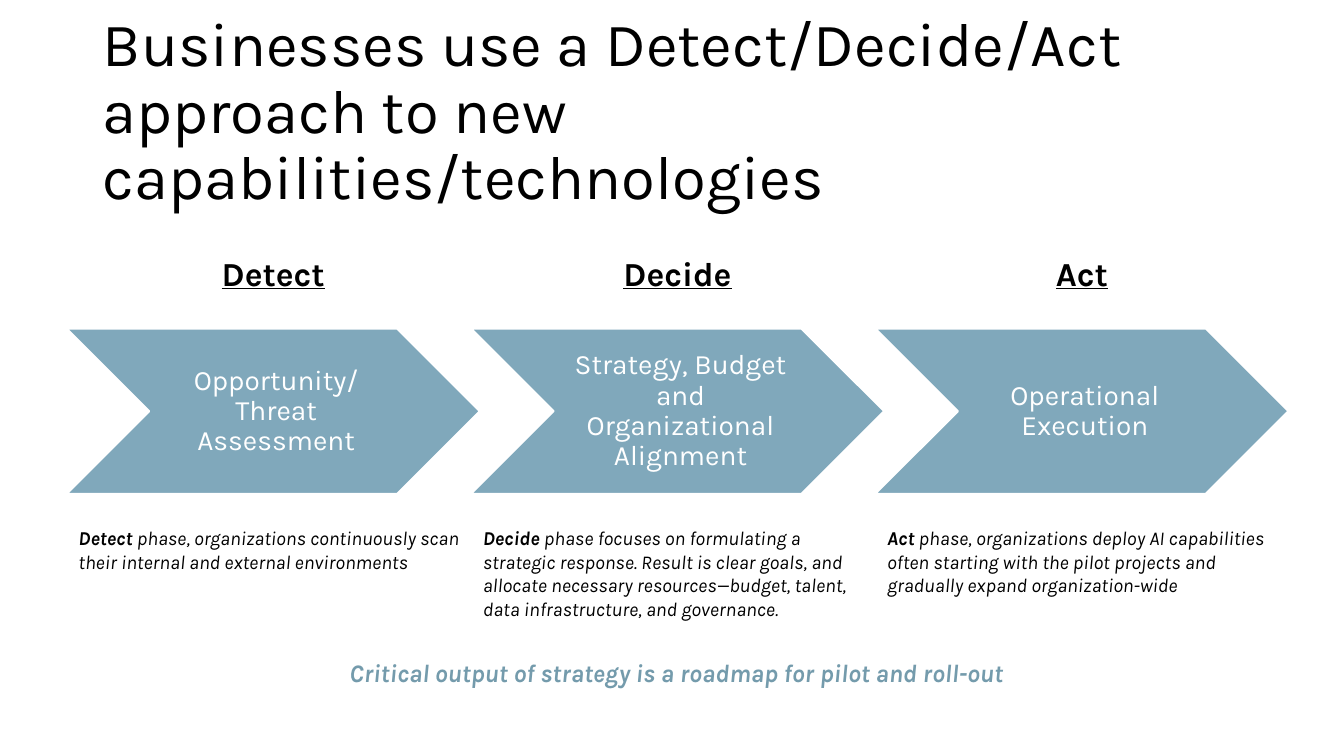
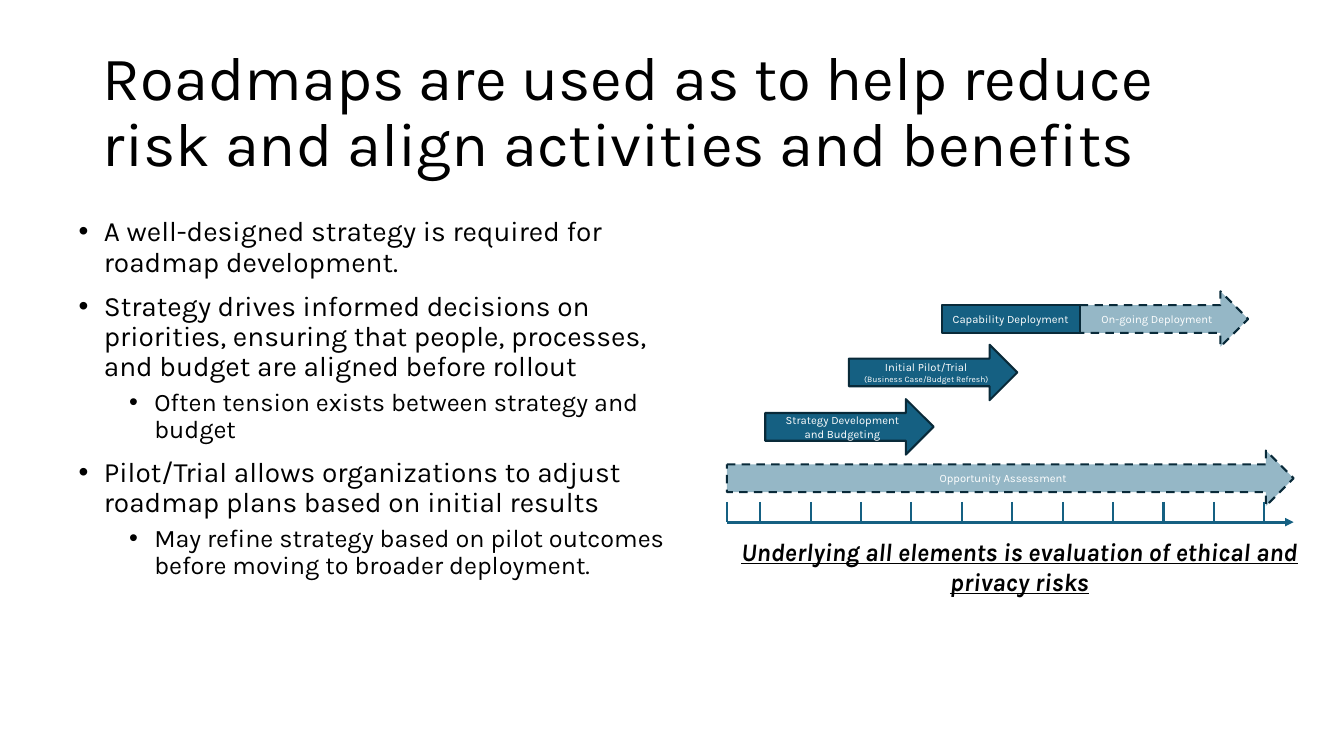
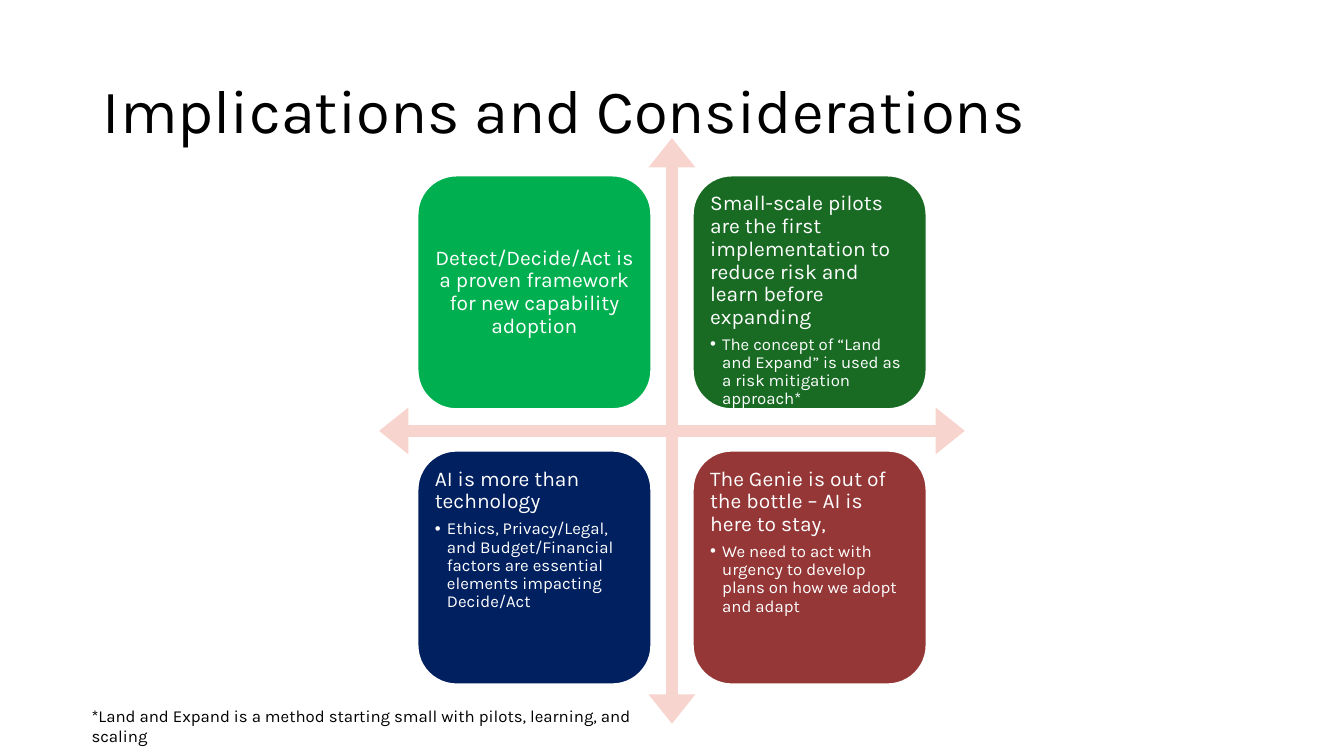
from dataclasses import dataclass

from lxml import etree
from pptx import Presentation
from pptx.dml.color import RGBColor
from pptx.enum.dml import MSO_LINE
from pptx.enum.shapes import MSO_CONNECTOR, MSO_SHAPE
from pptx.enum.text import MSO_ANCHOR, MSO_AUTO_SIZE, PP_ALIGN
from pptx.oxml.ns import qn
from pptx.util import Inches, Pt


@dataclass(frozen=True)
class Theme:
    font: str = "Karla"
    # Colours
    black: str = "000000"
    white: str = "FFFFFF"
    blue: str = "156082"
    outline: str = "092A39"
    message: str = "749BAC"
    cross: str = "F7D5CE"
    light_green: str = "00B050"
    dark_green: str = "196B24"
    navy: str = "002060"
    red: str = "953737"
    # Type sizes
    title: int = 44
    heading: int = 24
    body: int = 20
    sub_body: int = 18
    card: int = 15
    caption: int = 14
    note: int = 12
    bar: int = 8
    bar_note: int = 6
    # Line width and line spacing
    line: float = 1.5
    spacing: float = 0.9


T = Theme()
TITLE_ONLY, TITLE_AND_BODY = 5, 1


# Text helpers

def style(p, size, color=T.black, **marks):
    """Format every run of a paragraph; marks are bold, italic, underline."""
    for r in p.runs:
        r.font.name = T.font
        r.font.size = Pt(size)
        r.font.color.rgb = RGBColor.from_string(color)
        for mark, value in marks.items():
            setattr(r.font, mark, value)


def add_bullet(p, left, hang):
    pPr = p._p.get_or_add_pPr()
    pPr.set("marL", str(Inches(left)))
    pPr.set("indent", str(-Inches(hang)))
    etree.SubElement(pPr, qn("a:buFont")).set("typeface", "Arial")
    etree.SubElement(pPr, qn("a:buChar")).set("char", "•")


def next_paragraph(tf, index):
    return tf.paragraphs[0] if index == 0 else tf.add_paragraph()


def set_insets(tf, left, top, right, bottom):
    tf.margin_left, tf.margin_top = Inches(left), Inches(top)
    tf.margin_right, tf.margin_bottom = Inches(right), Inches(bottom)


def add_text(s, x, y, w, h, text, size, color=T.black, align=PP_ALIGN.LEFT, **marks):
    tf = s.shapes.add_textbox(Inches(x), Inches(y), Inches(w), Inches(h)).text_frame
    tf.word_wrap = True
    p = tf.paragraphs[0]
    p.text = text
    p.alignment = align
    style(p, size, color, **marks)
    return p


# Slide and shape helpers

def place(sp, x, y, w, h):
    sp.left, sp.top, sp.width, sp.height = Inches(x), Inches(y), Inches(w), Inches(h)


def add_slide(prs, layout, title):
    s = prs.slides.add_slide(prs.slide_layouts[layout])
    place(s.shapes.title, 0.92, 0.4, 11.5, 1.45)
    tf = s.shapes.title.text_frame
    tf.text = title
    tf.auto_size = MSO_AUTO_SIZE.NONE
    tf.vertical_anchor = MSO_ANCHOR.MIDDLE
    p = tf.paragraphs[0]
    p.alignment = PP_ALIGN.LEFT
    p.line_spacing = T.spacing
    style(p, T.title)
    return s


def add_shape(s, kind, x, y, w, h, fill, line=None, opacity=None, dashed=False):
    sp = s.shapes.add_shape(kind, Inches(x), Inches(y), Inches(w), Inches(h))
    sp.shadow.inherit = False
    sp.fill.solid()
    sp.fill.fore_color.rgb = RGBColor.from_string(fill)
    if opacity:
        color = sp.fill._xPr.find(".//" + qn("a:srgbClr"))
        etree.SubElement(color, qn("a:alpha")).set("val", str(opacity * 1000))
    if line:
        sp.line.color.rgb = RGBColor.from_string(line)
        sp.line.width = Pt(T.line)
        if dashed:
            sp.line.dash_style = MSO_LINE.DASH
    else:
        sp.line.fill.background()
    return sp


def add_line(s, x1, y1, x2, y2, width=T.line, arrow=False):
    cn = s.shapes.add_connector(
        MSO_CONNECTOR.STRAIGHT, Inches(x1), Inches(y1), Inches(x2), Inches(y2))
    cn.line.color.rgb = RGBColor.from_string(T.blue)
    cn.line.width = Pt(width)
    if arrow:
        etree.SubElement(cn.line._get_or_add_ln(), qn("a:tailEnd")).set("type", "triangle")
    etree.SubElement(cn._element.spPr, qn("a:effectLst"))


def add_phase(s, x, heading, step, caption):
    """One column: heading, chevron and a caption that opens with the heading."""
    w = 4.1
    add_text(s, x, 2.46, w, 0.5, heading, T.heading, align=PP_ALIGN.CENTER,
             bold=True, underline=True)

    sp = add_shape(s, MSO_SHAPE.CHEVRON, x, 3.26, w, 1.64, T.blue, T.white, opacity=54)
    tf = sp.text_frame
    set_insets(tf, 0.09, 0.03, 0.03, 0.03)
    p = tf.paragraphs[0]
    p.text = step
    p.alignment = PP_ALIGN.CENTER
    p.line_spacing = T.spacing
    style(p, T.body, T.white)

    p = add_text(s, x + 0.02, 5.17, 4.07, 1.04, heading, T.caption)
    p.add_run().text = caption
    style(p, T.caption, italic=True)
    p.runs[0].font.bold = True


def add_bar(s, kind, x, y, w, h, lines, ongoing=False):
    """A roadmap bar; ongoing work is pale and dashed."""
    sp = add_shape(s, kind, x, y, w, h, T.blue, T.outline,
                   opacity=45 if ongoing else None, dashed=ongoing)
    for i, text in enumerate(lines):
        p = next_paragraph(sp.text_frame, i)
        p.text = text
        p.alignment = PP_ALIGN.CENTER
        style(p, T.bar_note if i else T.bar, T.white)


def add_card(s, x, y, fill, text, point=None):
    """A rounded card: a lone statement is centred, one with a point is not."""
    sp = add_shape(s, MSO_SHAPE.ROUNDED_RECTANGLE, x, y, 2.32, 2.32, fill, T.white)
    tf = sp.text_frame
    set_insets(tf, 0.06, 0.06, 0.06, 0.06)
    tf.vertical_anchor = MSO_ANCHOR.TOP if point else MSO_ANCHOR.MIDDLE
    p = tf.paragraphs[0]
    p.text = text
    p.alignment = PP_ALIGN.LEFT if point else PP_ALIGN.CENTER
    p.line_spacing = T.spacing
    style(p, T.card, T.white)
    if point:
        p.space_after = Pt(5)
        p = tf.add_paragraph()
        p.text = point
        p.alignment = PP_ALIGN.LEFT
        add_bullet(p, 0.12, 0.12)
        p.line_spacing = T.spacing
        style(p, T.note, T.white)


def fill_body(s, items):
    """Fill the body placeholder with (level, text) bullets."""
    body = s.placeholders[1]
    place(body, 0.68, 2.11, 6.23, 4.65)
    tf = body.text_frame
    tf.auto_size = MSO_AUTO_SIZE.NONE
    for i, (level, text) in enumerate(items):
        p = next_paragraph(tf, i)
        p.text = text
        p.level = level
        add_bullet(p, 0.25 + 0.5 * level, 0.25)
        p.line_spacing = T.spacing
        p.space_before = Pt(0 if i == 0 else 5 if level else 10)
        style(p, T.sub_body if level else T.body)


# Slides

def build_approach(prs):
    s = add_slide(prs, TITLE_ONLY, "Businesses use a Detect/Decide/Act "
                  "approach to new capabilities/technologies")
    phases = [
        ("Detect", "Opportunity/Threat Assessment",
         " phase, organizations continuously scan their internal and external environments"),
        ("Decide", "Strategy, Budget and Organizational Alignment",
         " phase focuses on formulating a strategic response. Result is clear goals, and "
         "allocate necessary resources—budget, talent, data infrastructure, and governance."),
        ("Act", "Operational Execution",
         " phase, organizations deploy AI capabilities often starting with the pilot "
         "projects and gradually expand organization-wide"),
    ]
    for i, phase in enumerate(phases):
        add_phase(s, 0.66 + 4.01 * i, *phase)
    add_text(s, 3.21, 6.47, 7, 0.4,
             "Critical output of strategy is a roadmap for pilot and roll-out",
             T.sub_body, T.message, PP_ALIGN.CENTER, bold=True, italic=True)


def build_roadmap(prs):
    s = add_slide(prs, TITLE_AND_BODY, "Roadmaps are used as to help reduce risk "
                  "and align activities and benefits")
    fill_body(s, [
        (0, "A well-designed strategy is required for roadmap development."),
        (0, "Strategy drives informed decisions on priorities, ensuring that people, "
            "processes, and budget are aligned before rollout"),
        (1, "Often tension exists between strategy and budget"),
        (0, "Pilot/Trial allows organizations to adjust roadmap plans based on "
            "initial results"),
        (1, "May refine strategy based on pilot outcomes before moving to broader "
            "deployment."),
    ])

    # Roadmap bars, from the bottom row up
    arrow = MSO_SHAPE.RIGHT_ARROW
    left, length, head = 7.21, 5.62, 0.55
    add_bar(s, arrow, left, 4.47, length, head, ["Opportunity Assessment"], ongoing=True)
    add_bar(s, arrow, 7.59, 3.96, 1.67, head, ["Strategy Development and Budgeting"])
    add_bar(s, arrow, 8.42, 3.42, 1.67, head,
            ["Initial Pilot/Trial", "(Business Case/Budget Refresh)"])
    add_bar(s, arrow, 10.71, 2.89, 1.67, head, ["On-going Deployment"], ongoing=True)
    add_bar(s, MSO_SHAPE.RECTANGLE, 9.34, 3.03, 1.37, 0.27, ["Capability Deployment"])

    # Time axis with its ticks
    axis = 5.18
    add_line(s, left, axis, left + length, axis, width=2, arrow=True)
    for x in [left] + [7.54 + 0.5 * i for i in range(11)]:
        add_line(s, x, axis - 0.2, x, axis)

    add_text(s, left, 5.27, 5.8, 0.71,
             "Underlying all elements is evaluation of ethical and privacy risks",
             T.sub_body, align=PP_ALIGN.CENTER, bold=True, italic=True, underline=True)


def build_implications(prs):
    s = add_slide(prs, TITLE_ONLY, "Implications and Considerations")
    cross = add_shape(s, MSO_SHAPE.QUAD_ARROW, 3.76, 1.37, 5.81, 5.81, T.cross)
    for i, value in enumerate((0.02, 0.04, 0.05)):
        cross.adjustments[i] = value

    cards = [
        (T.light_green, "Detect/Decide/Act is a proven framework for new capability adoption"),
        (T.dark_green, "Small-scale pilots are the first implementation to reduce risk and "
         "learn before expanding",
         "The concept of “Land and Expand” is used as a risk mitigation approach*"),
        (T.navy, "AI is more than technology",
         "Ethics, Privacy/Legal, and Budget/Financial factors are essential elements "
         "impacting Decide/Act"),
        (T.red, "The Genie is out of the bottle – AI is here to stay,",
         "We need to act with urgency to develop plans on how we adopt and adapt"),
    ]
    for i, card in enumerate(cards):
        row, col = divmod(i, 2)
        add_card(s, 4.14 + 2.73 * col, 1.74 + 2.73 * row, *card)

    add_text(s, 0.81, 6.95, 5.8, 0.3, "*Land and Expand is a method starting small with "
             "pilots, learning, and scaling", T.note)


def main():
    prs = Presentation()
    prs.slide_width, prs.slide_height = Inches(13.33), Inches(7.5)
    build_approach(prs)
    build_roadmap(prs)
    build_implications(prs)
    prs.save("out.pptx")


if __name__ == "__main__":
    main()
